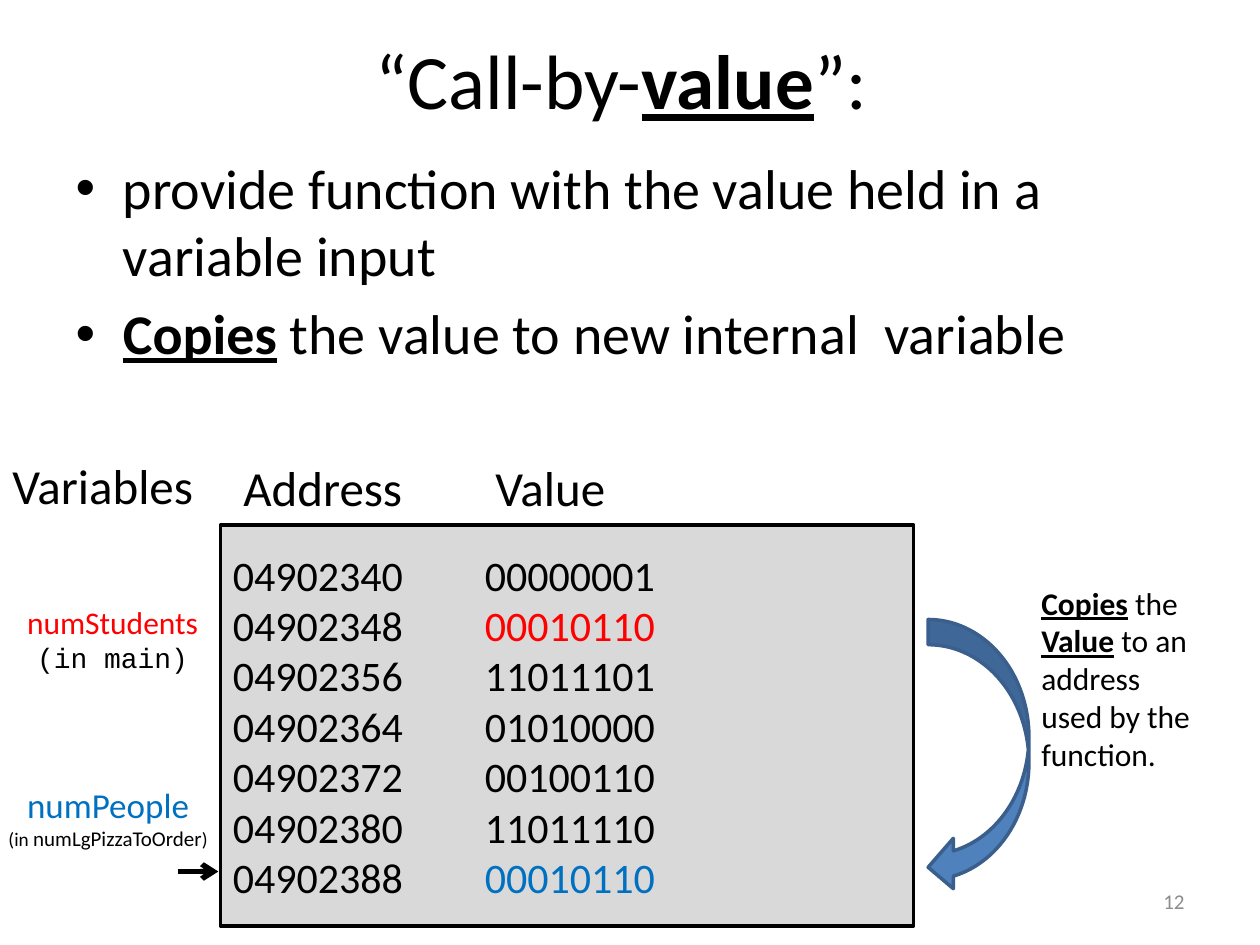
from lxml.etree import SubElement
from pptx import Presentation
from pptx.dml.color import RGBColor
from pptx.enum.shapes import MSO_CONNECTOR, MSO_SHAPE
from pptx.enum.text import MSO_ANCHOR, MSO_AUTO_SIZE, PP_ALIGN
from pptx.oxml.ns import qn
from pptx.util import Inches, Pt

COLORS = {"black": "000000", "red": "FF0000", "blue": "0070C0", "number": "8C8C8C",
          "memory": "D9D9D9", "arrow": "4F81BD", "arrow_edge": "3A5F8C"}
KEY = {"bold": True, "underline": True}
LEFT, CENTER, RIGHT = PP_ALIGN.LEFT, PP_ALIGN.CENTER, PP_ALIGN.RIGHT

prs = Presentation()
prs.slide_width, prs.slide_height = Inches(10), Inches(7.5)
s = prs.slides.add_slide(prs.slide_layouts[1])

# Grid of 120 columns by 90 rows
COL, ROW = prs.slide_width / 120, prs.slide_height / 90


def grid(x, y, w, h):
    return [int(v) for v in (x * COL, y * ROW, w * COL, h * ROW)]


def write(sp, paragraphs, size, wrap=True, anchor=MSO_ANCHOR.TOP,
          fit=MSO_AUTO_SIZE.NONE):
    """Fill a shape with (alignment, [(text, format), ...]) paragraphs."""
    tf = sp.text_frame
    for name, value in {"word_wrap": wrap, "vertical_anchor": anchor,
                        "auto_size": fit}.items():
        setattr(tf, name, value)
    for i, (align, runs) in enumerate(paragraphs):
        p = tf.add_paragraph() if i else tf.paragraphs[0]
        p.alignment = align
        for text, extra in runs:
            r = p.add_run()
            r.text = text
            fmt = {"name": "Calibri", "size": size, "color": "black", **extra}
            r.font.color.rgb = RGBColor.from_string(COLORS[fmt.pop("color")])
            r.font.size = Pt(fmt.pop("size"))
            for name, value in fmt.items():
                setattr(r.font, name, value)


# Title and bullet list
title, body = s.placeholders[0], s.placeholders[1]
for sp, box in ((title, (6, 0, 108, 15)), (body, (6, 14, 108, 25.2))):
    sp.left, sp.top, sp.width, sp.height = grid(*box)
write(title, [(CENTER, [("“Call-by-", {}), ("value", KEY), ("”: ", {})])], 44,
      anchor=MSO_ANCHOR.MIDDLE)
write(body, [
    (LEFT, [("provide function with the value held in a variable input", {})]),
    (LEFT, [("Copies", KEY), (" the value to new internal  variable", {})]),
], 32)

# Memory block and copy arrow
shapes = [
    (MSO_SHAPE.RECTANGLE, (21, 50, 66, 38.2), "memory", "black"),
    (MSO_SHAPE.CURVED_LEFT_ARROW, (88.4, 59, 9.6, 26), "arrow", "arrow_edge"),
]
drawn = []
for kind, box, fill, edge in shapes:
    sp = s.shapes.add_shape(kind, *grid(*box))
    sp.shadow.inherit = False
    sp.fill.solid()
    sp.fill.fore_color.rgb = RGBColor.from_string(COLORS[fill])
    sp.line.color.rgb = RGBColor.from_string(COLORS[edge])
    sp.line.width = Pt(2)
    drawn.append(sp)

# Memory rows: addresses step by eight bytes
values = ["00000001", "00010110", "11011101", "01010000",
          "00100110", "11011110", "00010110"]
marked = {1: "red", 6: "blue"}
rows = [(LEFT, [(f"{4902340 + 8 * i:08d}\t\t", {}),
                (value, {"color": marked.get(i, "black")})])
        for i, value in enumerate(values)]
write(drawn[0], rows, 24, anchor=MSO_ANCHOR.MIDDLE)

# Headings, variable names, explanation and slide number
labels = [
    ((22, 43, 64, 6.8), 28, True, [(LEFT, [("Address\t\tValue", {})])]),
    ((0, 42.8, 20.4, 6.8), 28, True, [(LEFT, [("Variables", {})])]),
    ((1.4, 56.8, 19, 8), 18, False, [
        (LEFT, [("numStudents", {"color": "red"})]),
        (CENTER, [("(in main)", {"name": "Courier New", "size": 16})])]),
    ((-0.5, 74, 21.6, 7.7), 11, False, [
        (CENTER, [("numPeople", {"size": 20, "color": "blue"})]),
        (CENTER, [("(in ", {}), ("numLgPizzaToOrder", {"size": 12}), (")", {})])]),
    ((98, 55, 17, 23), 18, True, [
        (LEFT, [("Copies", KEY), (" the ", {}), ("Value", KEY),
                (" to an address used by the function.", {})])]),
]
for box, size, wrap, paragraphs in labels:
    write(s.shapes.add_textbox(*grid(*box)), paragraphs, size, wrap,
          fit=MSO_AUTO_SIZE.SHAPE_TO_FIT_TEXT)
write(s.shapes.add_textbox(*grid(86, 83.4, 28, 4.8)),
      [(RIGHT, [("12", {"color": "number"})])], 12, anchor=MSO_ANCHOR.MIDDLE)

# Pointer from numPeople to its memory row
line = s.shapes.add_connector(MSO_CONNECTOR.STRAIGHT, *grid(17, 83, 20.8, 83))
line.line.color.rgb = RGBColor.from_string(COLORS["black"])
line.line.width = Pt(3)
SubElement(line.line._get_or_add_ln(), qn("a:tailEnd"), type="arrow")
SubElement(line._element.spPr, qn("a:effectLst"))

prs.save("out.pptx")
